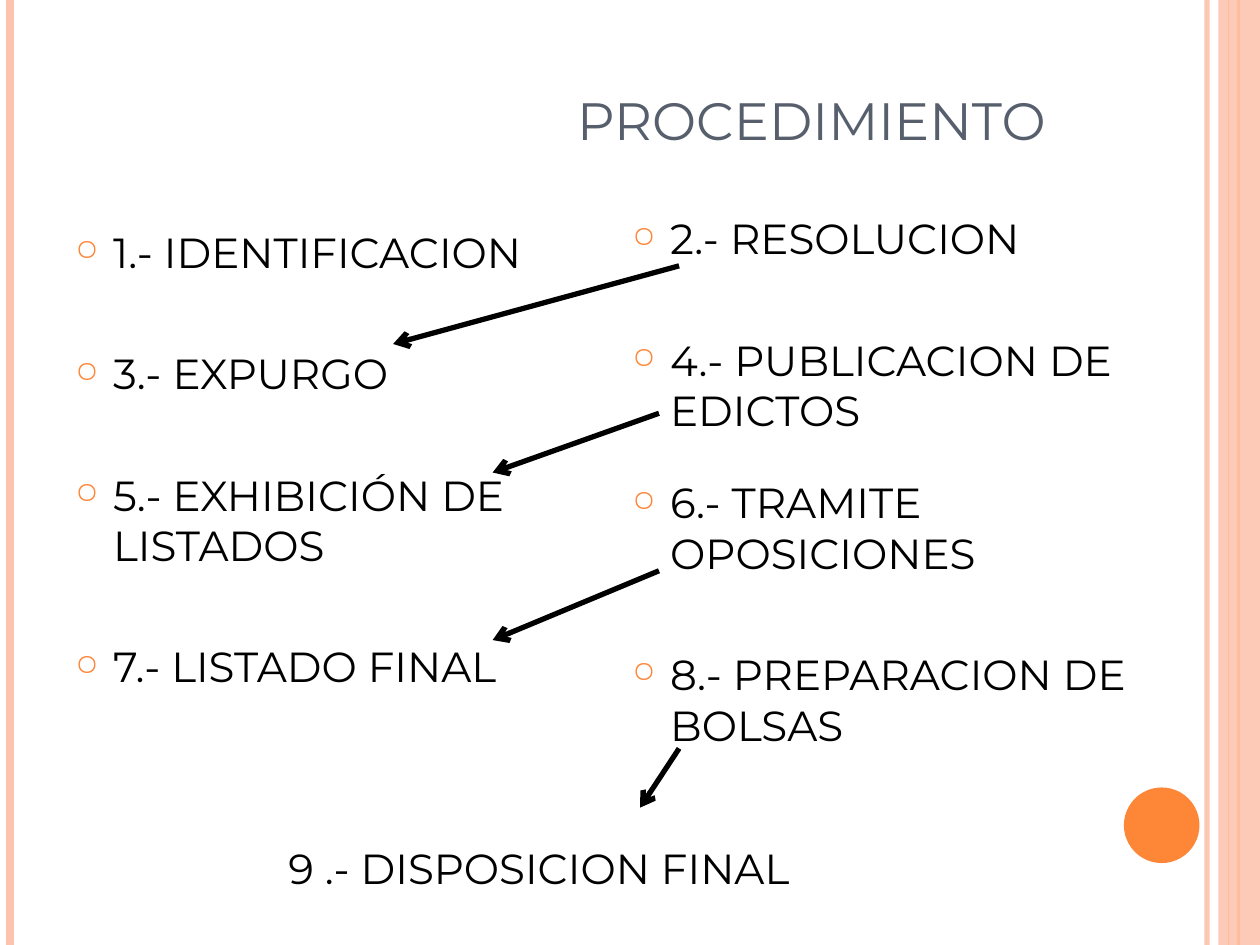
from dataclasses import dataclass

from lxml.etree import SubElement
from pptx import Presentation
from pptx.dml.color import RGBColor
from pptx.enum.shapes import MSO_CONNECTOR, MSO_SHAPE
from pptx.enum.text import MSO_ANCHOR, MSO_AUTO_SIZE, PP_ALIGN
from pptx.oxml.ns import qn
from pptx.util import Inches, Pt


@dataclass(frozen=True)
class Theme:
    font: str = "Montserrat"
    title_size: float = 30
    body_size: float = 24
    title: str = "575F6D"
    text: str = "000000"
    accent: str = "FE8637"
    pale: str = "FEC3AE"
    wide_gap: float = 40.5
    narrow_gap: float = 24


THEME = Theme()
TITLE_BOX = (0.5, 0.3, 8.17, 0.95)
ODD_BOX = (0.5, 1.75, 4.34, 5.33)
EVEN_BOX = (4.92, 1.64, 4.34, 5.49)
LAST_BOX = (2.19, 6.64, 5.39, 0.5)
HANGING = 0.3

# Each step: wording and space before it
ODD_STEPS = [
    ("1.- IDENTIFICACION", 0),
    ("3.- EXPURGO", THEME.wide_gap),
    ("5.- EXHIBICIÓN DE LISTADOS", THEME.wide_gap),
    ("7.- LISTADO FINAL", THEME.wide_gap),
]
EVEN_STEPS = [
    ("2.- RESOLUCION", 0),
    ("4.- PUBLICACION DE EDICTOS", THEME.wide_gap),
    ("6.- TRAMITE OPOSICIONES", THEME.narrow_gap),
    ("8.- PREPARACION DE BOLSAS", THEME.wide_gap),
]
# Start and end of each arrow
STEP_ARROWS = [
    ((5.39, 2.11), (3.12, 2.73)),
    ((5.23, 3.28), (3.91, 3.75)),
    ((5.23, 4.53), (3.91, 5.08)),
    ((5.39, 5.94), (5.08, 6.41)),
]
# Left position, colour, width and opacity of each stripe
STRIPES = [
    (9.58, THEME.pale, 3, 93),
    (0.08, THEME.pale, 4.5, 100),
    (9.83, THEME.accent, 1.5, 100),
    (9.75, THEME.accent, 0.75, 100),
]


def set_all(target, values):
    for name, value in values.items():
        setattr(target, name, value)


def set_opacity(element, percent):
    if percent < 100:
        color = next(element.iter(qn("a:srgbClr")))
        SubElement(color, qn("a:alpha"), val=str(percent * 1000))


def style_run(paragraph, text, size, color):
    run = paragraph.add_run()
    set_all(run, {"text": text})
    set_all(run.font, {"name": THEME.font, "size": Pt(size)})
    run.font.color.rgb = RGBColor.from_string(color)


def add_line(slide, start, end, color, width, opacity=100):
    line = slide.shapes.add_connector(
        MSO_CONNECTOR.STRAIGHT, *map(Inches, start + end))
    line.line.width = Pt(width)
    line.line.color.rgb = RGBColor.from_string(color)
    properties = line._element.spPr
    set_opacity(properties, opacity)
    SubElement(properties, qn("a:effectLst"))
    return line


def add_block(slide, preset, box, color, opacity=100):
    block = slide.shapes.add_shape(preset, *map(Inches, box))
    block.shadow.inherit = False
    block.fill.solid()
    block.fill.fore_color.rgb = RGBColor.from_string(color)
    set_opacity(block._element.spPr, opacity)
    block.line.fill.background()


def add_decoration(slide, height):
    for left, color, width, opacity in STRIPES:
        add_line(slide, (left, 0), (left, height), color, width, opacity)
    add_block(slide, MSO_SHAPE.RECTANGLE, (9.67, 0, 0.33, height), THEME.pale, 87)
    add_block(slide, MSO_SHAPE.OVAL, (8.92, 6.25, 0.6, 0.6), THEME.accent)


def add_title(slide, box, text):
    title = slide.shapes.title
    set_all(title, dict(zip(("left", "top", "width", "height"), map(Inches, box))))
    # The wide left margin sets the heading towards the right
    set_all(title.text_frame, {
        "auto_size": MSO_AUTO_SIZE.NONE,
        "vertical_anchor": MSO_ANCHOR.BOTTOM,
        "margin_left": Inches(3.81),
    })
    paragraph = title.text_frame.paragraphs[0]
    paragraph.alignment = PP_ALIGN.CENTER
    style_run(paragraph, text, THEME.title_size, THEME.title)


def add_bullet(paragraph):
    properties = paragraph._p.get_or_add_pPr()
    indent = Inches(HANGING)
    properties.set("marL", str(indent))
    properties.set("indent", str(-indent))
    color = SubElement(properties, qn("a:buClr"))
    SubElement(color, qn("a:srgbClr"), val=THEME.accent)
    SubElement(properties, qn("a:buSzPct"), val="70000")
    SubElement(properties, qn("a:buChar"), char="○")


def add_steps(slide, box, steps, bulleted=True):
    frame = slide.shapes.add_textbox(*map(Inches, box)).text_frame
    frame.word_wrap = True
    for index, (text, gap) in enumerate(steps):
        paragraph = frame.add_paragraph() if index else frame.paragraphs[0]
        paragraph.space_before = Pt(gap)
        if bulleted:
            add_bullet(paragraph)
        style_run(paragraph, text, THEME.body_size, THEME.text)


def add_arrows(slide, arrows):
    for start, end in arrows:
        arrow = add_line(slide, start, end, THEME.text, 3)
        SubElement(arrow.line._get_or_add_ln(), qn("a:tailEnd"), type="arrow")


def main():
    presentation = Presentation()
    set_all(presentation, {"slide_width": Inches(10), "slide_height": Inches(7.5)})
    slide = presentation.slides.add_slide(presentation.slide_layouts[5])

    add_decoration(slide, 7.5)
    add_title(slide, TITLE_BOX, "PROCEDIMIENTO")
    add_steps(slide, ODD_BOX, ODD_STEPS)
    add_steps(slide, EVEN_BOX, EVEN_STEPS)
    add_arrows(slide, STEP_ARROWS)
    add_steps(slide, LAST_BOX, [("9 .- DISPOSICION FINAL", 0)], bulleted=False)

    presentation.save("out.pptx")


if __name__ == "__main__":
    main()
